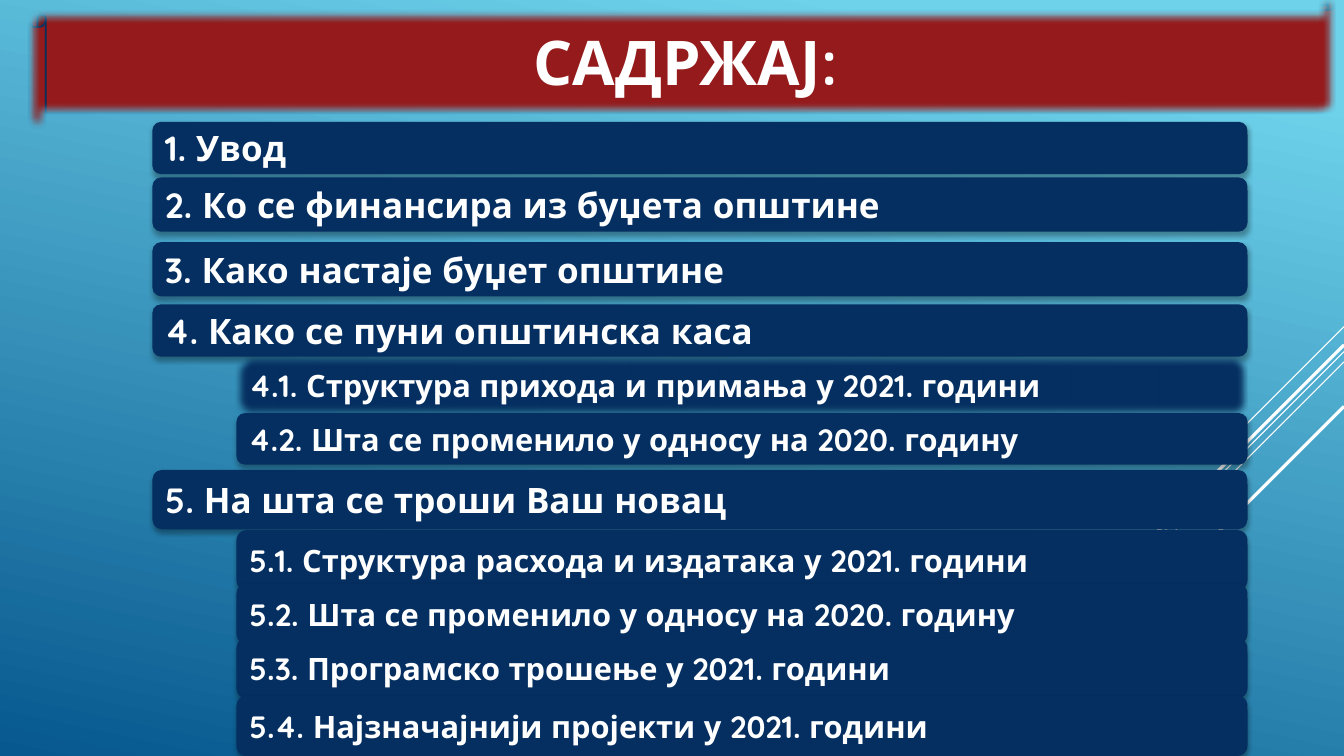
import pptx
import pptx.dml.color
import pptx.enum.shapes
import pptx.enum.text
import pptx.oxml.ns
import pptx.util
from lxml import etree

Cm, Pt = pptx.util.Cm, pptx.util.Pt
SHAPE = pptx.enum.shapes.MSO_SHAPE
ALIGN = pptx.enum.text.PP_ALIGN
COLORS = {"sky": "6ED2EB", "deep": "06588E", "navy": "052F61",
          "red": "941A1B", "white": "FFFFFF", "black": "000000"}
FONT = "Quicksand"
WIDTH, HEIGHT = 33.87, 19.05
INDENT = 2.12
SOFT_EDGE = Pt(5)
RAYS = [(8.23, 2.54, 0.75), (8.86, 8.28, 0.75), (9.12, 5.26, 0.75),
        (8.69, 4.85, 2.25), (10.24, 3.53, 2.25)]
ENTRIES = [
    (0, 0, 1.32, "1. Увод"),
    (0, 1.4, 1.37, "2. Ко се финансира из буџета општине"),
    (0, 3.03, 1.37, "3. Како настаје буџет општине"),
    (0, 4.6, 1.32, "4. Како се пуни општинска каса"),
    (1, 5.87, 1.52, "4.1. Структура прихода и примања у 2021. години"),
    (1, 7.34, 1.3, "4.2. Шта се променило у односу на 2020. годину"),
    (0, 8.77, 1.5, "5. На шта се троши Ваш новац"),
    (1, 10.29, 1.52, "5.1. Структура расхода и издатака у 2021. години"),
    (1, 11.64, 1.52, "5.2. Шта се променило у односу на 2020. годину"),
    (1, 13.01, 1.52, "5.3. Програмско трошење у 2021. години"),
    (1, 14.46, 1.52, "5.4. Најзначајнији пројекти у 2021. години"),
]
SOFT_ENTRY = "4.1."


def rgb(name):
    """Return the named colour."""
    return pptx.dml.color.RGBColor.from_string(COLORS[name])


def add_child(parent, tag, **attrs):
    """Append a drawing element with the given attributes."""
    child = etree.SubElement(parent, pptx.oxml.ns.qn(tag))
    for key, value in attrs.items():
        child.set(key, str(value))
    return child


def add_effects(sp, shadow=False, soft=False):
    """Give a shape a drop shadow, soft edges, both or neither."""
    sp.shadow.inherit = False
    effects = sp._element.spPr.find(pptx.oxml.ns.qn("a:effectLst"))
    if shadow:
        outer = add_child(effects, "a:outerShdw", blurRad=Pt(3.5), dist=Pt(2.2),
                          dir=90 * 60000, algn="ctr", rotWithShape=0)
        color = add_child(outer, "a:srgbClr", val=COLORS["black"])
        add_child(color, "a:alpha", val=32000)
    if soft:
        add_child(effects, "a:softEdge", rad=SOFT_EDGE)


def add_label(s, kind, box, text, size, fill, align):
    """Add a filled shape holding one line of bold white text."""
    sp = s.shapes.add_shape(kind, *(Cm(v) for v in box))
    sp.fill.solid()
    sp.fill.fore_color.rgb = rgb(fill)
    sp.line.fill.background()
    tf = sp.text_frame
    tf.word_wrap = True
    tf.vertical_anchor = pptx.enum.text.MSO_ANCHOR.MIDDLE
    p = tf.paragraphs[0]
    p.text = text
    p.alignment = align
    r = p.runs[0]
    r.font.name, r.font.size, r.font.bold = FONT, Pt(size), True
    r.font.color.rgb = rgb("white")
    return sp


def add_background(s):
    """Fill the slide with the blue gradient."""
    fill = s.background.fill
    fill.gradient()
    fill.gradient_angle = 258
    for stop, position, name in zip(fill.gradient_stops, (0.1, 1), ("sky", "deep")):
        stop.position = position
        stop.color.rgb = rgb(name)


def add_rays(s, right):
    """Draw the diagonal white lines that start at the right edge."""
    for top, run, weight in RAYS:
        line = s.shapes.add_connector(
            pptx.enum.shapes.MSO_CONNECTOR.STRAIGHT,
            Cm(right), Cm(top), Cm(right - run), Cm(top + run))
        line.line.color.rgb = rgb("white")
        line.line.width = Pt(weight)
        add_child(line._element.spPr, "a:effectLst")


def add_title(s, box):
    """Add the red scroll with the slide title."""
    sp = add_label(s, SHAPE.HORIZONTAL_SCROLL, box, "САДРЖАЈ:", 44, "red", ALIGN.CENTER)
    sp.line.color.rgb = rgb("navy")
    sp.line.width = Pt(1.25)
    add_effects(sp, soft=True)


def add_contents(s, left, top, width):
    """Stack the entries, indenting the second level."""
    for level, offset, height, text in ENTRIES:
        shift = level * INDENT
        box = (left + shift, top + offset, width - shift, height)
        sp = add_label(s, SHAPE.ROUNDED_RECTANGLE, box, text,
                       22 if level else 25, "navy", ALIGN.LEFT)
        add_effects(sp, shadow=True, soft=text.startswith(SOFT_ENTRY))


def main():
    """Build and save the contents slide."""
    prs = pptx.Presentation()
    prs.slide_width, prs.slide_height = Cm(WIDTH), Cm(HEIGHT)
    s = prs.slides.add_slide(prs.slide_layouts[6])
    add_background(s)
    add_rays(s, WIDTH)
    add_title(s, (0.71, -0.18, 32.92, 3.45))
    add_contents(s, 3.84, 3.07, 27.6)
    prs.save("out.pptx")


if __name__ == "__main__":
    main()
